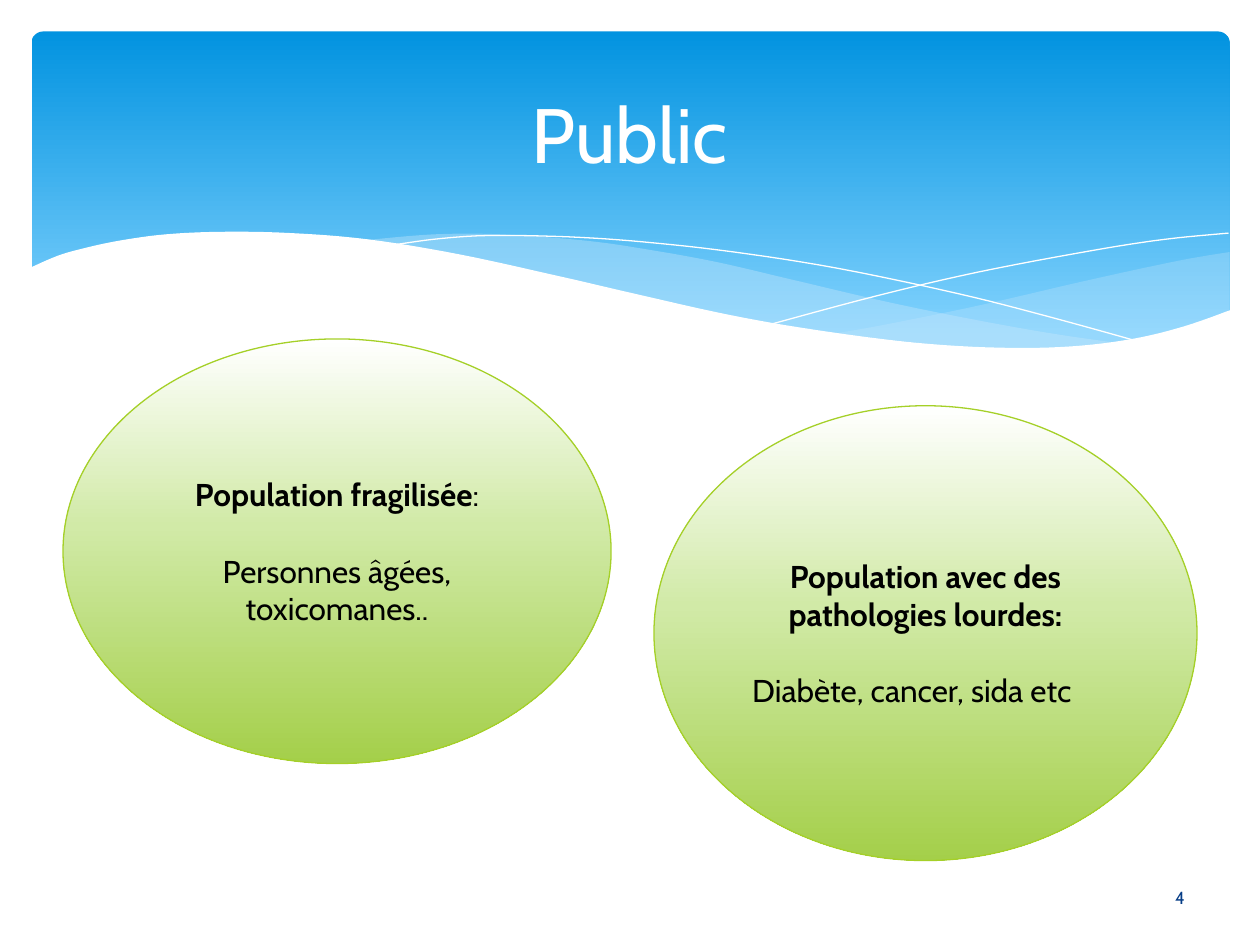
from lxml import etree
from pptx import Presentation
from pptx.dml.color import RGBColor
from pptx.enum.shapes import MSO_SHAPE
from pptx.enum.text import MSO_ANCHOR, PP_ALIGN
from pptx.oxml.ns import qn
from pptx.util import Pt

PX = 9144  # EMU per px, 100 px to the inch
FONT = "Cabin"
OVAL, ROUNDED = MSO_SHAPE.OVAL, MSO_SHAPE.ROUNDED_RECTANGLE
LEFT, CENTER, MIDDLE = PP_ALIGN.LEFT, PP_ALIGN.CENTER, MSO_ANCHOR.MIDDLE
COLORS = {
    "white": "FFFFFF", "black": "000000", "navy": "073E87",
    "sky": "0293E0", "pale_sky": "83D3FE", "mist": "C6E7FC",
    "pale_green": "D1EAA7", "green": "A4CF4A", "lime": "A5D028",
}
SKY_STOPS = [(0, "sky"), (90, "pale_sky")]
GREEN_STOPS = [(0, "white"), (44, "pale_green"), (100, "green")]

# Knots of the wave edges, in px
RIGHT_TOP = [(976, 200), (935, 207), (861, 223), (779, 242), (706, 257), (661, 265)]
RIGHT_BOTTOM = [(661, 265), (719, 271), (769, 277), (814, 278), (863, 275),
                (905, 269), (942, 259), (976, 247)]
MIDDLE_TOP = [(893, 273), (837, 265), (775, 254), (706, 240), (629, 222), (569, 208),
              (514, 198), (465, 191), (399, 186), (344, 186), (286, 191)]
MIDDLE_BOTTOM = [(286, 191), (342, 199), (404, 211), (449, 222), (530, 240), (601, 255),
                 (665, 266), (722, 274), (773, 277), (818, 278), (857, 277), (893, 273)]
FALLING_LINE = [(309, 195), (344, 190), (387, 187), (450, 188), (510, 192), (582, 200),
                (665, 213), (760, 233), (831, 251), (907, 272)]
RISING_LINE = [(613, 257), (695, 235), (776, 216), (866, 199), (924, 190), (975, 185)]
WHITE_EDGE = [(977, 246), (940, 259), (899, 269), (850, 275), (793, 276), (726, 272),
              (648, 262), (579, 250), (503, 233), (447, 220), (365, 202), (292, 190),
              (230, 185), (177, 184), (132, 186), (95, 191), (67, 197), (46, 203), (23, 213)]


def rgb(name):
    return RGBColor.from_string(COLORS[name])


def emu(*lengths):
    return [round(v * PX) for v in lengths]


def smooth(knots, steps=6):
    """Points of a Catmull-Rom curve through the knots."""
    ends = [knots[0], *knots, knots[-1]]
    points = [knots[0]]
    for a, b, c, d in zip(ends, ends[1:], ends[2:], ends[3:]):
        for i in range(1, steps + 1):
            t = i / steps
            points.append(tuple(
                (2 * q + (r - p) * t + (2 * p - 5 * q + 4 * r - s) * t ** 2
                 + (3 * q - p - 3 * r + s) * t ** 3) / 2
                for p, q, r, s in zip(a, b, c, d)))
    return points


def set_gradient(sp, stops):
    """Top-to-bottom gradient from (percent, colour) stops."""
    sp.fill.gradient()
    sp.fill.gradient_angle = 270
    gs_list = sp._element.spPr.find(qn("a:gradFill")).find(qn("a:gsLst"))
    gs_list.clear()
    for percent, color in stops:
        gs = etree.SubElement(gs_list, qn("a:gs"), pos=str(percent * 1000))
        etree.SubElement(gs, qn("a:srgbClr"), val=COLORS[color])


def set_line(sp, color=None, width=0.0):
    if color:
        sp.line.color.rgb = rgb(color)
        sp.line.width = Pt(width)
    else:
        sp.line.fill.background()


def add_gradient_shape(s, kind, box, stops, line=None):
    sp = s.shapes.add_shape(kind, *emu(*box))
    sp.shadow.inherit = False
    set_gradient(sp, stops)
    set_line(sp, line, 0.75)
    return sp


def add_wave(s, points, fill=None, alpha=100, line=None):
    """A filled wave, or an open hairline when there is no fill."""
    start, *rest = [emu(*point) for point in points]
    builder = s.shapes.build_freeform(*start, scale=1.0)
    builder.add_line_segments(rest, close=fill is not None)
    sp = builder.convert_to_shape()
    sp.shadow.inherit = False
    if fill:
        sp.fill.solid()
        sp.fill.fore_color.rgb = rgb(fill)
        color = sp._element.spPr.find(qn("a:solidFill"))[0]
        etree.SubElement(color, qn("a:alpha"), val=str(alpha * 1000))
    else:
        sp.fill.background()
    set_line(sp, line)


def add_text(p, text, size=18, color="black", bold=False, align=CENTER, before=0):
    p.alignment = align
    p.space_before = Pt(before)
    r = p.add_run()
    r.text = text
    r.font.name, r.font.size, r.font.bold = FONT, Pt(size), bold
    r.font.color.rgb = rgb(color)


def open_frame(sp):
    tf = sp.text_frame
    tf.word_wrap = True
    tf.vertical_anchor = MIDDLE
    return tf


def add_bubble(s, box, heading, detail, tail="", align=CENTER, indent=0):
    """Green ellipse with a bold heading and a detail one line below."""
    tf = open_frame(add_gradient_shape(s, OVAL, box, GREEN_STOPS, "lime"))
    add_text(tf.paragraphs[0], heading, bold=True)
    if tail:
        add_text(tf.paragraphs[0], tail)
    p = tf.add_paragraph()
    add_text(p, detail, align=align, before=22)
    if indent:
        p._p.get_or_add_pPr().set("marL", str(indent * PX))


def add_banner(s):
    banner = add_gradient_shape(s, ROUNDED, (25, 25, 951, 270), SKY_STOPS)
    banner.adjustments[0] = 0.034
    add_wave(s, smooth(RIGHT_TOP) + smooth(RIGHT_BOTTOM), "mist", 29)
    add_wave(s, smooth(MIDDLE_TOP) + smooth(MIDDLE_BOTTOM), "mist", 40)
    for knots in (FALLING_LINE, RISING_LINE):
        add_wave(s, smooth(knots), line="white")
    add_wave(s, smooth(WHITE_EDGE) + [(23, 329), (977, 329)], "white")


def add_title(s, text):
    title = s.shapes.title
    title.left, title.top, title.width, title.height = emu(50, 37, 900, 137)
    add_text(open_frame(title).paragraphs[0], text, size=44, color="white")
    s.shapes._spTree.append(title._element)  # in front of the banner


def main():
    prs = Presentation()
    prs.slide_width, prs.slide_height = emu(1000, 750)
    s = prs.slides.add_slide(prs.slide_layouts[5])

    # Banner and title
    add_banner(s)
    add_title(s, "Public")

    # The two population groups
    add_bubble(s, (50, 269, 435, 337), "Population fragilisée",
               "Personnes âgées, toxicomanes..", tail=":")
    add_bubble(s, (519, 322, 431, 361), "Population avec des pathologies lourdes:",
               "Diabète, cancer, sida etc", align=LEFT, indent=5)

    # Slide number
    number = s.shapes.add_textbox(*emu(873, 692, 127, 41))
    add_text(open_frame(number).paragraphs[0], "4", size=10, color="navy")

    prs.save("out.pptx")


if __name__ == "__main__":
    main()
